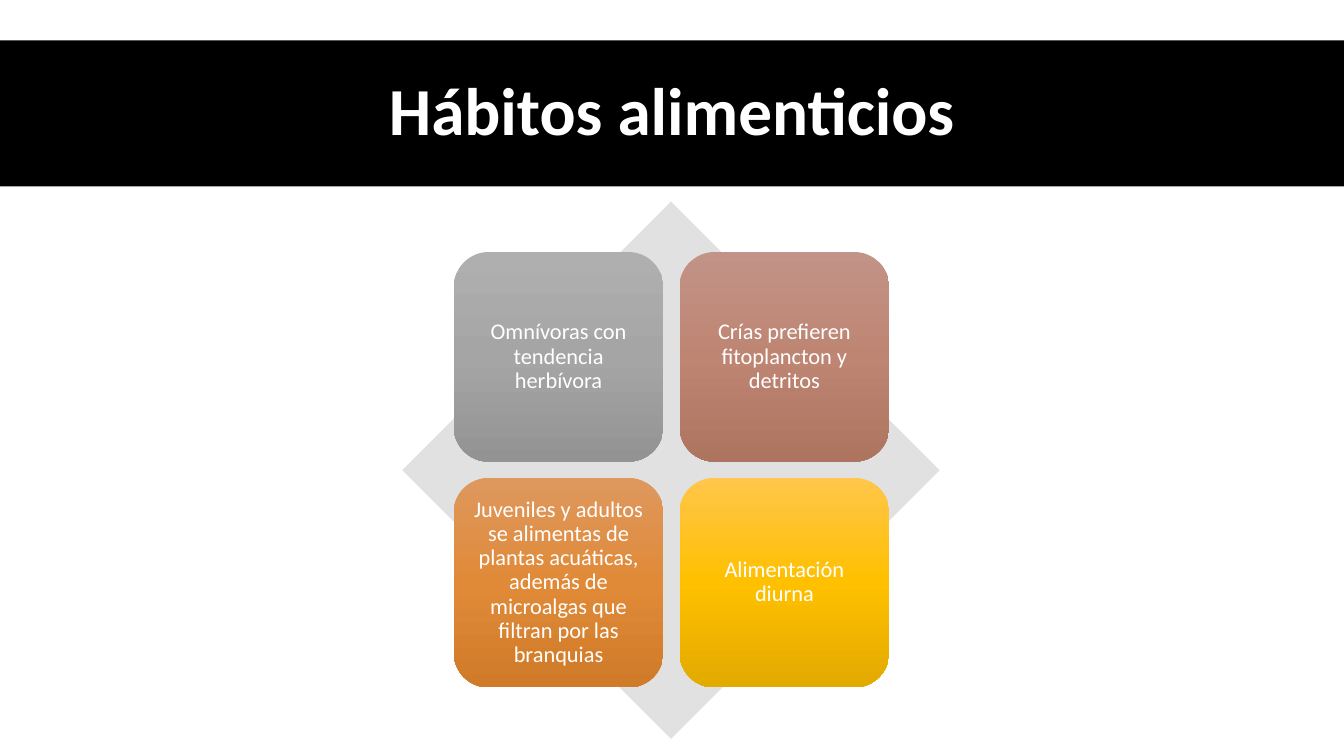
from copy import deepcopy
from pptx import Presentation
from pptx.dml.color import RGBColor
from pptx.enum.shapes import MSO_SHAPE
from pptx.enum.text import MSO_ANCHOR, PP_ALIGN
from pptx.oxml.ns import qn
from pptx.util import Inches, Pt


class Theme:
    font = "Calibri"
    black, white, pale = "000000", "FFFFFF", "E1E1E1"
    gray = ("AFAFAF", "A5A5A5", "939393")
    clay = ("C29387", "BE8573", "AD7460")
    rust = ("DE985E", "E08A38", "D07B29")
    gold = ("FFC64B", "FFC000", "E3AA00")
    head, body = 48, 16


class Deck:
    def __init__(self, theme):
        self.theme = theme
        self.file = Presentation()
        self.file.slide_width = Inches(13.33)
        self.file.slide_height = Inches(7.5)
        self.slide = self.file.slides.add_slide(self.file.slide_layouts[5])

    def style(self, item, values):
        for name, value in values.items():
            setattr(item, name, value)

    def label(self, shape, text, size, bold=False, inset=0.1, after=0):
        frame = shape.text_frame
        frame.text = text
        self.style(frame, {
            "word_wrap": True, "vertical_anchor": MSO_ANCHOR.MIDDLE,
            "margin_left": Inches(inset), "margin_right": Inches(inset),
            "margin_top": Inches(inset), "margin_bottom": Inches(inset)})
        para = frame.paragraphs[0]
        self.style(para, {"alignment": PP_ALIGN.CENTER, "line_spacing": 0.9,
                          "space_after": Pt(after)})
        font = para.runs[0].font
        self.style(font, {"name": self.theme.font, "size": Pt(size), "bold": bold})
        font.color.rgb = RGBColor.from_string(self.theme.white)

    def paint(self, shape, color):
        shape.fill.solid()
        shape.fill.fore_color.rgb = RGBColor.from_string(color)

    def blend(self, shape, colors):
        shape.fill.gradient()
        shape.fill.gradient_angle = 270
        stops = shape._element.spPr.find(qn("a:gradFill")).find(qn("a:gsLst"))
        stops.insert(1, deepcopy(stops[0]))
        for i, (stop, color) in enumerate(zip(shape.fill.gradient_stops, colors)):
            stop.position = i / 2
            stop.color.rgb = RGBColor.from_string(color)

    def title(self, text, left, top, width, height):
        shape = self.slide.shapes.title
        self.style(shape, {"left": Inches(left), "top": Inches(top),
                           "width": Inches(width), "height": Inches(height)})
        self.paint(shape, self.theme.black)
        self.label(shape, text, self.theme.head, bold=True)

    def shape(self, kind, left, top, side):
        shape = self.slide.shapes.add_shape(
            kind, Inches(left), Inches(top), Inches(side), Inches(side))
        shape.shadow.inherit = False
        shape.line.fill.background()
        return shape

    def diamond(self, left, top, side):
        self.paint(self.shape(MSO_SHAPE.DIAMOND, left, top, side), self.theme.pale)

    def card(self, text, colors, left, top, side):
        shape = self.shape(MSO_SHAPE.ROUNDED_RECTANGLE, left, top, side)
        self.blend(shape, colors)
        self.label(shape, text, self.theme.body, inset=0.07, after=5.6)


def main():
    theme = Theme()
    deck = Deck(theme)

    # Title band
    deck.title("Hábitos alimenticios", 0, 0.4, 13.33, 1.45)

    # Diamond behind the cards
    deck.diamond(3.99, 2, 5.33)

    # Two by two cards
    cards = [
        ("Omnívoras con tendencia herbívora", theme.gray),
        ("Crías prefieren fitoplancton y detritos", theme.clay),
        ("Juveniles y adultos se alimentas de plantas acuáticas, además de "
         "microalgas que filtran por las branquias", theme.rust),
        ("Alimentación diurna", theme.gold),
    ]
    side, step = 2.08, 2.24
    for i, (text, colors) in enumerate(cards):
        row, col = divmod(i, 2)
        deck.card(text, colors, 4.5 + col * step, 2.5 + row * step, side)

    deck.file.save("out.pptx")


if __name__ == "__main__":
    main()
